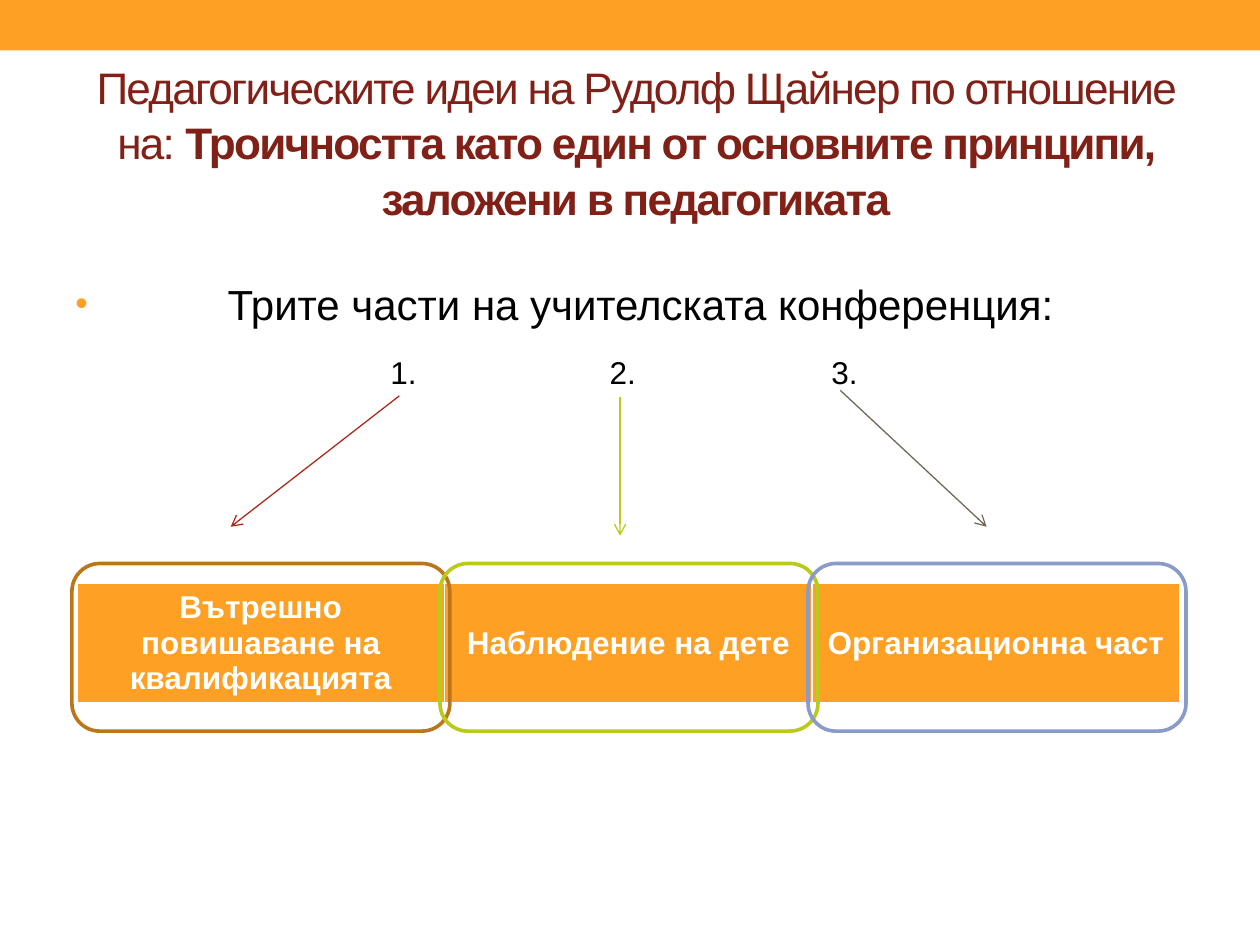
from lxml import etree
from pptx import Presentation
from pptx.dml.color import RGBColor
from pptx.enum import shapes, text
from pptx.oxml.ns import qn
from pptx.util import Cm, Pt

COLORS = {
    "orange": "FDA023", "maroon": "802017", "black": "000000",
    "white": "FFFFFF", "red": "AA2B1E", "lime": "B9CA1A",
    "gray": "71685C", "brown": "BB761A", "blue": "899BCA",
}
FONT = "Arial"


def color(name):
    return RGBColor.from_string(COLORS[name])


def write(par, words, size=18, ink="black", bold=False, track=0, align=None):
    """Add a run to a paragraph; track is letter spacing in points."""
    run = par.add_run()
    run.text = words
    font = run.font
    font.name, font.size, font.bold = FONT, Pt(size), bold
    font.color.rgb = color(ink)
    if track:
        run._r.get_or_add_rPr().set("spc", str(int(track * 100)))
    if align is not None:
        par.alignment = align


def bullet(par, ink, scale, indent):
    """Give a paragraph a hanging bullet; indent is in cm."""
    props = par._p.get_or_add_pPr()
    props.set("marL", str(Cm(indent)))
    props.set("indent", str(-Cm(indent)))
    tint = etree.SubElement(props, qn("a:buClr"))
    etree.SubElement(tint, qn("a:srgbClr"), val=COLORS[ink])
    etree.SubElement(props, qn("a:buSzPct"), val=str(scale * 1000))
    etree.SubElement(props, qn("a:buFont"), typeface=FONT)
    etree.SubElement(props, qn("a:buChar"), char="•")


class Deck:
    """Holds the current slide; all lengths are in cm."""

    def __init__(self, wide, high):
        self.prs = Presentation()
        self.prs.slide_width, self.prs.slide_height = Cm(wide), Cm(high)
        self.slide = self.prs.slides.add_slide(self.prs.slide_layouts[5])
        self.items = self.slide.shapes

    def title(self, x, y, w, h):
        """Place the title and return its paragraph."""
        box = self.items.title
        box.left, box.top, box.width, box.height = map(Cm, (x, y, w, h))
        frame = box.text_frame
        frame.word_wrap = True
        frame.auto_size = text.MSO_AUTO_SIZE.NONE
        frame.vertical_anchor = text.MSO_ANCHOR.MIDDLE
        return frame.paragraphs[0]

    def label(self, x, y, w, h):
        """Add a text box and return its paragraph."""
        frame = self.items.add_textbox(*map(Cm, (x, y, w, h))).text_frame
        frame.word_wrap = True
        return frame.paragraphs[0]

    def shape(self, kind, x, y, w, h, fill=None, line=None, weight=2.08):
        item = self.items.add_shape(kind, *map(Cm, (x, y, w, h)))
        item.shadow.inherit = False
        if fill:
            item.fill.solid()
            item.fill.fore_color.rgb = color(fill)
        else:
            item.fill.background()
        if line:
            item.line.color.rgb = color(line)
            item.line.width = Pt(weight)
        else:
            item.line.fill.background()

    def arrow(self, start, end, ink):
        item = self.items.add_connector(
            shapes.MSO_CONNECTOR.STRAIGHT, *map(Cm, start + end))
        item.line.color.rgb = color(ink)
        item.line.width = Pt(0.75)
        etree.SubElement(item.line._get_or_add_ln(), qn("a:tailEnd"),
                         type="arrow")
        etree.SubElement(item._element.spPr, qn("a:effectLst"))

    def table(self, x, y, w, h, words):
        """Add a one-row table of centred bold cells."""
        grid = self.items.add_table(
            1, len(words), *map(Cm, (x, y, w, h))).table
        for cell, part in zip(grid.rows[0].cells, words):
            cell.fill.solid()
            cell.fill.fore_color.rgb = color("orange")
            cell.margin_top = cell.margin_bottom = Cm(0.06)
            cell.vertical_anchor = text.MSO_ANCHOR.MIDDLE
            write(cell.text_frame.paragraphs[0], part, ink="white",
                  bold=True, align=text.PP_ALIGN.CENTER)


def main():
    deck = Deck(25.4, 19.05)
    kinds = shapes.MSO_SHAPE
    deck.shape(kinds.RECTANGLE, 0, 0, 25.4, 1.02, fill="orange")

    head = deck.title(1.07, 1.47, 23.5, 2.74)
    head.line_spacing = 1.05
    style = dict(size=25.2, ink="maroon", track=-1,
                 align=text.PP_ALIGN.CENTER)
    write(head, "Педагогическите идеи на Рудолф Щайнер по отношение на: ",
          **style)
    write(head, "Троичността като един от основните принципи, "
          "заложени в педагогиката", bold=True, **style)

    body = deck.label(1.27, 5.49, 22.86, 12.32)
    body.space_before = Pt(4)
    bullet(body, "orange", 85, 3.07)
    write(body, "Трите части на учителската конференция:", size=24)

    deck.arrow((8.05, 7.98), (4.65, 10.62), "red")
    deck.arrow((16.94, 7.87), (19.89, 10.62), "gray")
    deck.arrow((12.5, 8), (12.5, 10.8), "lime")

    deck.table(1.55, 11.76, 22.23, 2.32, [
        "Вътрешно повишаване на квалификацията",
        "Наблюдение на дете",
        "Организационна част",
    ])

    for num, x in enumerate((7.62, 12.04, 16.51), 1):
        write(deck.label(x, 6.99, 1.27, 1.03), f"{num}.")

    for col, ink in enumerate(("brown", "lime", "blue")):
        deck.shape(kinds.ROUNDED_RECTANGLE, 1.45 + 7.42 * col, 11.36,
                   7.62, 3.38, line=ink)

    deck.prs.save("out.pptx")


if __name__ == "__main__":
    main()
